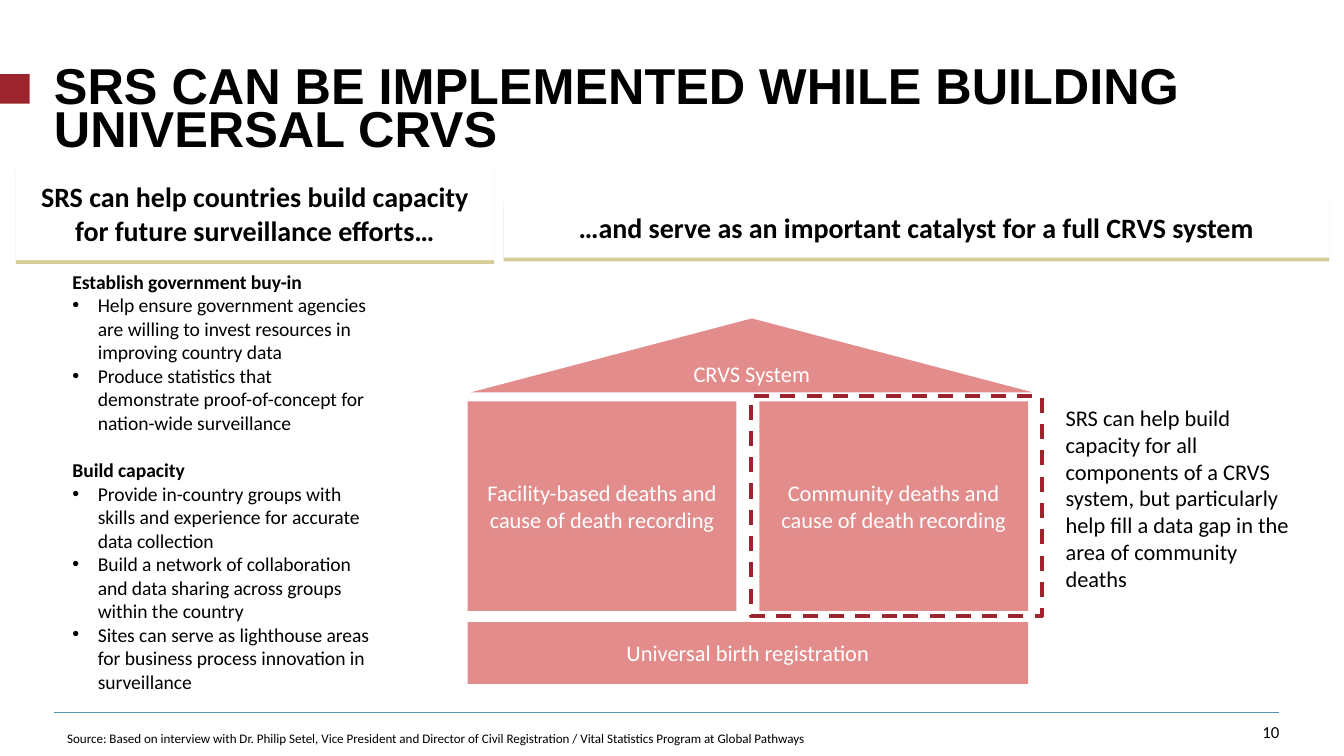
from pptx import Presentation
from pptx.dml.color import RGBColor
from pptx.enum.dml import MSO_LINE as Dash
from pptx.enum.shapes import MSO_CONNECTOR as Link, MSO_SHAPE as Form
from pptx.enum.text import MSO_ANCHOR as Anchor, MSO_AUTO_SIZE as Fit, PP_ALIGN as Align
from pptx.oxml.ns import qn
from pptx.util import Cm, Pt
from lxml.etree import SubElement as Sub

RED, SAND, ROSE, TEAL = "9B242D", "D5CB99", "C00000", "5393AB"
BLACK, WHITE = "000000", "FFFFFF"
TITLE = "SRS CAN BE IMPLEMENTED WHILE BUILDING UNIVERSAL CRVS"
SOURCE = ("Source: Based on interview with Dr. Philip Setel, Vice President and Director "
          "of Civil Registration / Vital Statistics Program at Global Pathways")
NOTE = ("SRS can help build capacity for all components of a CRVS system, but "
        "particularly help fill a data gap in the area of community deaths")
GOALS = {
    "Establish government buy-in": [
        "Help ensure government agencies are willing to invest resources in improving country data",
        "Produce statistics that demonstrate proof-of-concept for nation-wide surveillance",
    ],
    "Build capacity": [
        "Provide in-country groups with skills and experience for accurate data collection",
        "Build a network of collaboration and data sharing across groups within the country",
        "Sites can serve as lighthouse areas for business process innovation in surveillance",
    ],
}


def rgb(code):
    return RGBColor.from_string(code)


def cms(box):
    return [Cm(round(n, 2)) for n in box]


def write(shape, *lines, size=12, font="Calibri", color=BLACK, bold=False,
          align=Align.LEFT, anchor=Anchor.MIDDLE, pad=(0.25, 0.13)):
    """Fill a shape with one paragraph per line and return the paragraphs."""
    frame = shape.text_frame
    frame.word_wrap, frame.auto_size = True, Fit.NONE
    frame.vertical_anchor = anchor
    frame.margin_left = frame.margin_right = Cm(pad[0])
    frame.margin_top = frame.margin_bottom = Cm(pad[1])
    frame.text = "\n".join(lines)
    for para in frame.paragraphs:
        para.alignment = align
        face = para.runs[0].font
        face.name, face.size, face.bold = font, Pt(size), bold
        face.color.rgb = rgb(color)
    return frame.paragraphs


def label(slide, box, *lines, **form):
    return write(slide.shapes.add_textbox(*cms(box)), *lines, **form)


def block(slide, box, fill=None, form=Form.RECTANGLE, alpha=None):
    shape = slide.shapes.add_shape(form, *cms(box))
    shape.shadow.inherit = False
    shape.line.fill.background()
    if not fill:
        shape.fill.background()
        return shape
    shape.fill.solid()
    shape.fill.fore_color.rgb = rgb(fill)
    if alpha:
        tone = shape.fill._xPr.find(qn("a:solidFill"))[0]
        Sub(tone, qn("a:alpha"), val=str(alpha * 1000))
    return shape


def add_frame(slide, wide, high):
    """Place the title, marker, bottom rule, source and page number."""
    left, right, foot = 1.02, wide - 1.22, high - 0.83
    block(slide, (0, 1.4, 0.56, 0.56), RED)
    rule = slide.shapes.add_connector(Link.STRAIGHT, *cms((left, foot, right, foot)))
    rule.line.color.rgb, rule.line.width = rgb(TEAL), Pt(0.5)
    Sub(rule._element.spPr, qn("a:effectLst"))
    title = slide.shapes.title
    title.left, title.top, title.width, title.height = cms((left, 1.35, 23.14, 1.45))
    para, = write(title, TITLE, size=27, font="Arial", bold=True,
                  anchor=Anchor.TOP, pad=(0, 0))
    para.line_spacing = Pt(23)
    label(slide, (right - 0.53, foot + 0.13, 0.53, 0.43), "10", size=9,
          align=Align.RIGHT, anchor=Anchor.BOTTOM, pad=(0, 0))
    label(slide, (left, foot + 0.15, 24.05, 0.69), SOURCE, size=7)


def add_head(slide, box, text):
    """Place a heading whose hard shadow forms the line below it."""
    head = block(slide, box, WHITE)
    glow = Sub(head._element.spPr.find(qn("a:effectLst")), qn("a:outerShdw"),
               blurRad="0", dist=str(Pt(2)), dir="5400000", algn="t", rotWithShape="0")
    Sub(glow, qn("a:srgbClr"), val=SAND)
    write(head, text, size=15, bold=True, align=Align.CENTER,
          anchor=Anchor.BOTTOM, pad=(0.25, 0.25))


def add_goals(slide, box):
    lines = [line for head, items in GOALS.items() for line in (head, *items)]
    paras = label(slide, box, *lines, size=10.5, anchor=Anchor.TOP, pad=(0.25, 0.25))
    for spot, para in enumerate(paras):
        if para.text in GOALS:
            para.runs[0].font.bold = True
            para.space_before = Pt(12.8 if spot else 0)
            continue
        props = para._p.get_or_add_pPr()
        props.set("marL", str(Cm(0.48)))
        props.set("indent", str(-Cm(0.48)))
        Sub(props, qn("a:buFont"), typeface="Arial")
        Sub(props, qn("a:buChar"), char="•")


def add_house(slide, box):
    """Build the roof, base and two pillars, and outline the right pillar."""
    x, y, w, h = box
    pillar, top, tall, base = 5.08, y + 1.57, 3.96, 1.17
    right = x + w - pillar
    parts = [
        ("CRVS System", (x + 0.05, y, w + 0.05, 1.4), Form.ISOSCELES_TRIANGLE),
        ("Universal birth registration", (x, y + h - base, w, base), Form.RECTANGLE),
        ("Facility-based deaths and cause of death recording",
         (x, top, pillar, tall), Form.RECTANGLE),
        ("Community deaths and cause of death recording",
         (right, top, pillar, tall), Form.RECTANGLE),
    ]
    for text, place, form in parts:
        write(block(slide, place, ROSE, form, alpha=45), text,
              color=WHITE, align=Align.CENTER)
    edge = block(slide, (right - 0.15, top - 0.1, pillar + 0.41, tall + 0.2)).line
    edge.color.rgb, edge.width, edge.dash_style = rgb(RED), Pt(2), Dash.DASH


def main():
    wide, high = 25.4, 14.29
    deck = Presentation()
    deck.slide_width, deck.slide_height = Cm(wide), Cm(high)
    slide = deck.slides.add_slide(deck.slide_layouts[5])
    add_frame(slide, wide, high)
    add_head(slide, (0.3, 3.12, 9.04, 1.8),
             "SRS can help countries build capacity for future surveillance efforts…")
    add_goals(slide, (1.12, 4.85, 6.2, 8.76))
    add_head(slide, (9.52, 3.73, 15.6, 1.14),
             "…and serve as an important catalyst for a full CRVS system")
    add_house(slide, (8.84, 6.02, 10.59, 6.91))
    label(slide, (19.89, 5.26, 5, 8.31), NOTE)
    deck.save("out.pptx")


if __name__ == "__main__":
    main()
